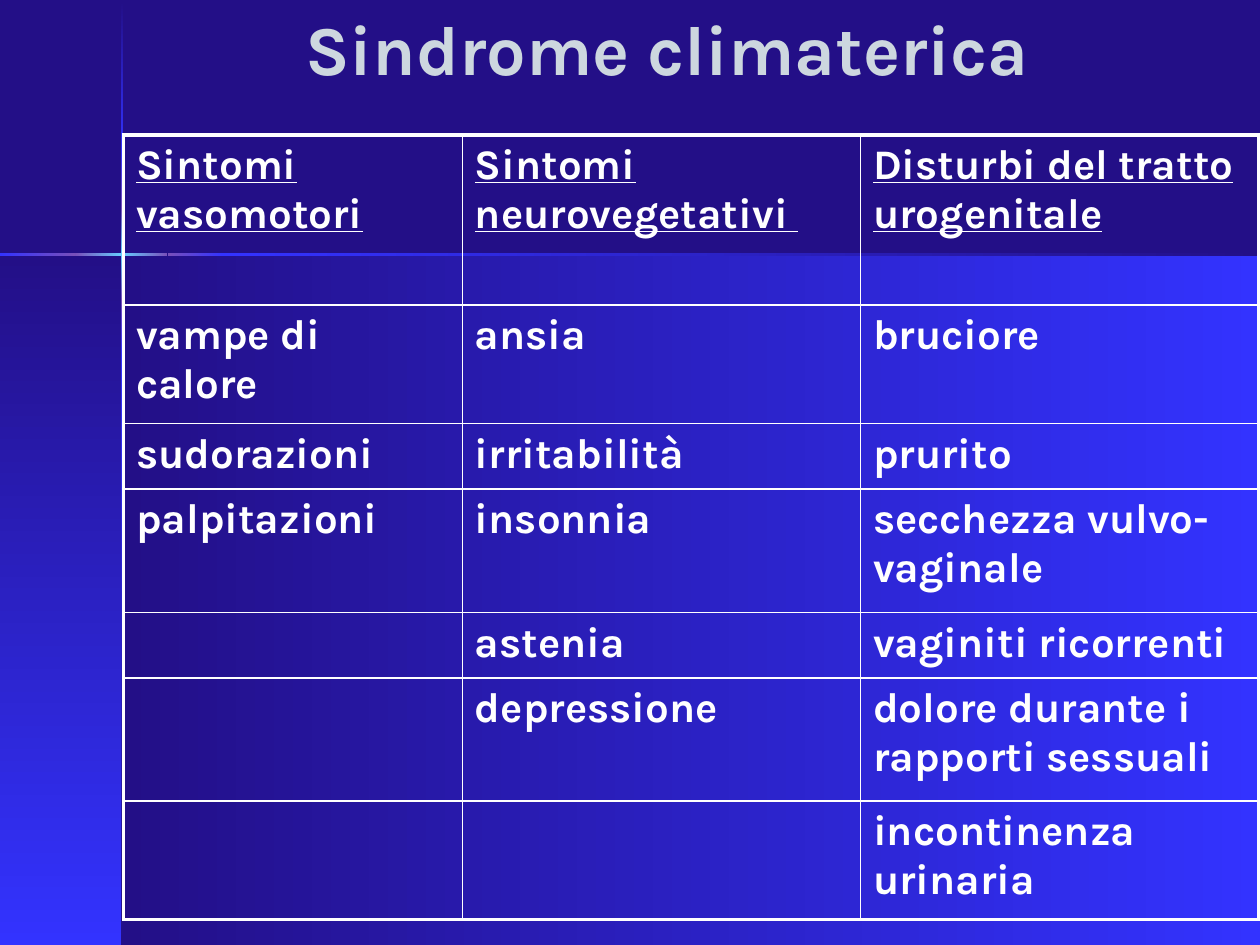
from itertools import pairwise

from pptx import Presentation
from pptx.dml.color import RGBColor
from pptx.enum.shapes import MSO_SHAPE as Shape
from pptx.enum.text import MSO_ANCHOR as Anchor, PP_ALIGN as Align
from pptx.oxml import parse_xml
from pptx.oxml.ns import nsdecls
from pptx.util import Inches, Pt

COLORS = {
    "navy": "230F87",
    "blue": "3333FF",
    "violet": "7850BA",
    "cyan": "66CCFF",
    "title": "CDD7DF",
    "white": "FFFFFF",
}
GLOWS = [("navy", "blue"), ("blue", "violet"), ("violet", "cyan", "violet"),
         ("violet", "blue"), ("blue", "navy")]
VERTICAL_BREAKS = [0.1, 12.1, 16.5, 23.8, 28.2, 75]
HORIZONTAL_BREAKS = [0, 6, 13.3, 17.7, 100]
COLUMN_WIDTHS = [26.9, 31.6, 31.6]
ROW_HEIGHTS = [13.5, 9.4, 5.2, 9.8, 5.2, 9.8, 9.4]
SYMPTOMS = [
    ["Sintomi vasomotori", "Sintomi neurovegetativi ", "Disturbi del tratto urogenitale"],
    ["vampe di calore", "ansia", "bruciore"],
    ["sudorazioni", "irritabilità", "prurito"],
    ["palpitazioni", "insonnia", "secchezza vulvo-vaginale"],
    ["", "astenia", "vaginiti ricorrenti"],
    ["", "depressione", "dolore durante i rapporti sessuali"],
    ["", "", "incontinenza urinaria"],
]


def write(frame, text, size=24, color="white", underline=None, align=Align.LEFT, before=0):
    frame.word_wrap = True
    paragraph = frame.paragraphs[0]
    paragraph.alignment = align
    if before:
        paragraph._p.get_or_add_pPr().append(parse_xml(
            f'<a:spcBef {nsdecls("a")}><a:spcPct val="{before * 1000}"/></a:spcBef>'))
    if not text:
        paragraph.font.size = Pt(size)
        return
    run = paragraph.add_run()
    run.text = text
    font = run.font
    font.name, font.size, font.bold, font.underline = "Karla", Pt(size), True, underline
    font.color.rgb = RGBColor.from_string(COLORS[color])


class SlideBuilder:
    """Places styled elements on a grid of 100 columns by 75 rows."""

    def __init__(self, presentation):
        self.unit = Inches(0.1)
        presentation.slide_width = 100 * self.unit
        presentation.slide_height = 75 * self.unit
        self.slide = presentation.slides.add_slide(presentation.slide_layouts[6])
        fill = self.slide.background.fill
        fill.solid()
        fill.fore_color.rgb = RGBColor.from_string(COLORS["navy"])

    def grid(self, *lengths):
        return [round(length * self.unit) for length in lengths]

    def gradient(self, box, colors, angle):
        shape = self.slide.shapes.add_shape(Shape.RECTANGLE, *self.grid(*box))
        shape.shadow.inherit = False
        step = 100000 // (len(colors) - 1)
        stops = "".join(
            f'<a:gs pos="{index * step}"><a:srgbClr val="{COLORS[color]}"/></a:gs>'
            for index, color in enumerate(colors))
        shape._element.spPr.insert(2, parse_xml(
            f'<a:gradFill {nsdecls("a")} rotWithShape="1"><a:gsLst>{stops}</a:gsLst>'
            f'<a:lin ang="{angle * 60000}" scaled="0"/></a:gradFill>'))
        shape.line.fill.background()

    def title(self, box, text):
        frame = self.slide.shapes.add_textbox(*self.grid(*box)).text_frame
        frame.vertical_anchor = Anchor.MIDDLE
        write(frame, text, size=40, color="title", align=Align.CENTER)

    def border(self, cell, side, width):
        cell._tc.get_or_add_tcPr().append(parse_xml(
            f'<a:ln{side} {nsdecls("a")} w="{Pt(width)}"><a:solidFill>'
            f'<a:srgbClr val="{COLORS["white"]}"/></a:solidFill></a:ln{side}>'))

    def table(self, left, top, widths, heights, texts):
        box = self.grid(left, top, sum(widths), sum(heights))
        table = self.slide.shapes.add_table(len(heights), len(widths), *box).table
        table.first_row = table.horz_banding = False
        for column, width in zip(table.columns, self.grid(*widths)):
            column.width = width
        for row, height in zip(table.rows, self.grid(*heights)):
            row.height = height
        for r, row_texts in enumerate(texts):
            for c, text in enumerate(row_texts):
                cell = table.cell(r, c)
                outer = {"L": c == 0, "R": c == len(widths) - 1,
                         "T": r == 0, "B": r == len(heights) - 1}
                for side, is_outer in outer.items():
                    self.border(cell, side, 2.25 if is_outer else 1)
                cell.fill.background()
                write(cell.text_frame, text, underline=r == 0, before=20)


def main():
    presentation = Presentation()
    builder = SlideBuilder(presentation)
    builder.gradient((9.7, 20.2, 90.3, 54.8), GLOWS[0], 0)
    builder.gradient((0, 20.2, 9.7, 54.8), GLOWS[0], 90)
    for (start, end), colors in zip(pairwise(VERTICAL_BREAKS), GLOWS):
        builder.gradient((9.6, start, 0.2, end - start), colors, 90)
    for (start, end), colors in zip(pairwise(HORIZONTAL_BREAKS), GLOWS[1:]):
        builder.gradient((start, 20.1, end - start, 0.2), colors, 0)
    builder.title((11.7, 0, 82.5, 7.6), "Sindrome climaterica")
    builder.table(9.8, 10.7, COLUMN_WIDTHS, ROW_HEIGHTS, SYMPTOMS)
    presentation.save("out.pptx")


if __name__ == "__main__":
    main()
